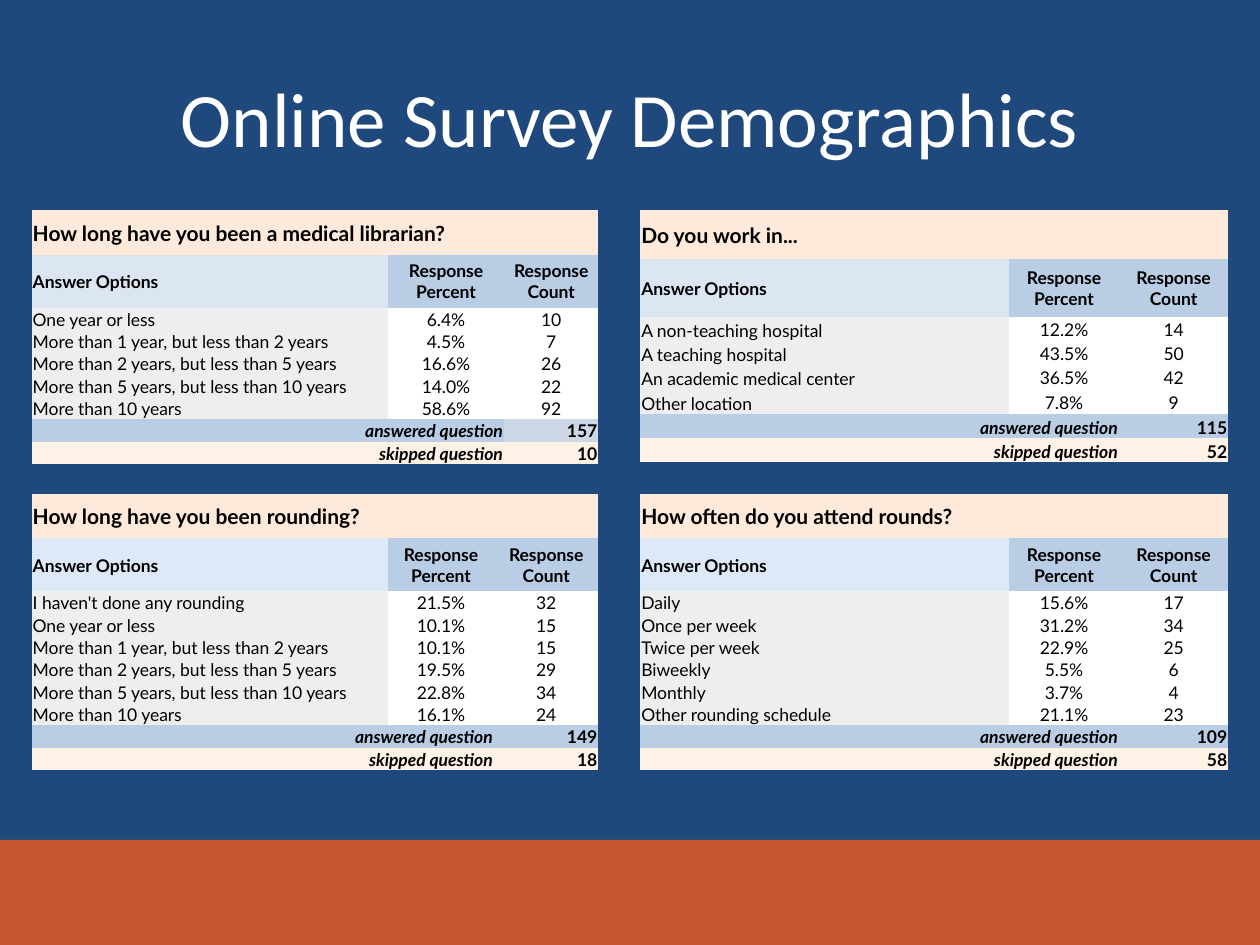
"""Build the survey demographics slide: a title, four result tables and a base band."""
from lxml.etree import SubElement
from pptx import Presentation
from pptx.dml.color import RGBColor
from pptx.enum.shapes import MSO_SHAPE
from pptx.enum.text import MSO_ANCHOR, PP_ALIGN
from pptx.oxml.ns import qn
from pptx.util import Inches, Pt

TITLE = "Online Survey Demographics"
HEADS = ["Answer Options", "Response Percent", "Response Count"]
YEARS = ["One year or less", "More than 1 year, but less than 2 years",
         "More than 2 years, but less than 5 years",
         "More than 5 years, but less than 10 years", "More than 10 years"]

TABLES = [
    dict(ask="How long have you been a medical librarian?", grid=(0, 0),
         cols=(2.83, 0.92, 0.75), head="DCE6F2", total="CDD8E6",
         names=YEARS, shares=[6.4, 4.5, 16.6, 14.0, 58.6],
         counts=[10, 7, 26, 22, 92], done=157, skipped=10),
    dict(ask="How long have you been rounding?", grid=(0, 1),
         cols=(2.83, 0.84, 0.83), head="DEE9F7", total="B9CDE5",
         names=["I haven't done any rounding"] + YEARS,
         shares=[21.5, 10.1, 10.1, 19.5, 22.8, 16.1],
         counts=[32, 15, 15, 29, 34, 24], done=149, skipped=18),
    dict(ask="Do you work in...", grid=(1, 0),
         cols=(2.93, 0.87, 0.87), head="DCE6F2", total="B9CDE5",
         names=["A non-teaching hospital", "A teaching hospital",
                "An academic medical center", "Other location"],
         shares=[12.2, 43.5, 36.5, 7.8],
         counts=[14, 50, 42, 9], done=115, skipped=52),
    dict(ask="How often do you attend rounds?", grid=(1, 1),
         cols=(2.93, 0.87, 0.87), head="DEE9F7", total="B9CDE5",
         names=["Daily", "Once per week", "Twice per week", "Biweekly",
                "Monthly", "Other rounding schedule"],
         shares=[15.6, 31.2, 22.9, 5.5, 3.7, 21.1],
         counts=[17, 34, 25, 6, 4, 23], done=109, skipped=58),
]

THEME = dict(back="1F497D", band="E35622", title="FFFFFF", ink="000000",
             ask="FDEADA", blue="B9CDE5", name="EEEEEE", value="FFFFFF",
             skip="FEF1E6", face="Calibri", body="Lato", big=44, mid=12, small=10)
PLAIN = "{2D5ABB26-0587-4C30-8999-92F81FD0307C}"
WIDE, HIGH = 10, 7.5
LEFTS, TOPS, DEPTHS = (0.25, 5.08), (1.67, 3.92), (2, 2.18)
ASK_ROW, HEAD_ROW = 2, 2.4
LEFT, MID, RIGHT = PP_ALIGN.LEFT, PP_ALIGN.CENTER, PP_ALIGN.RIGHT


def color(key):
    return RGBColor.from_string(THEME.get(key, key))


def style(para, face, size, ink, align):
    para.alignment = align
    para.font.name, para.font.size = THEME[face], Pt(THEME[size])
    para.font.color.rgb = color(ink)


def write(cell, text, fill, align=LEFT, size="small", low=False, bold=False, slant=False):
    cell.margin_left = cell.margin_right = cell.margin_top = Inches(0.01)
    cell.margin_bottom = 0
    cell.vertical_anchor = MSO_ANCHOR.BOTTOM if low else MSO_ANCHOR.MIDDLE
    cell.fill.solid()
    cell.fill.fore_color.rgb = color(fill)
    cell.text = str(text)
    para = cell.text_frame.paragraphs[0]
    style(para, "body", size, "ink", align)
    para.font.bold, para.font.italic = bold, slant


def add_table(slide, data):
    col, row = data["grid"]
    sizes = [ASK_ROW, HEAD_ROW] + [1] * (len(data["names"]) + 2)
    unit = DEPTHS[row] / sum(sizes)
    frame = slide.shapes.add_table(
        len(sizes), len(HEADS), Inches(LEFTS[col]), Inches(TOPS[row]),
        Inches(sum(data["cols"])), Inches(DEPTHS[row]))
    next(frame.element.iter(qn("a:tableStyleId"))).text = PLAIN
    table = frame.table
    table.first_row = table.horz_banding = False
    for part, width in zip(table.columns, data["cols"]):
        part.width = Inches(width)
    for part, size in zip(table.rows, sizes):
        part.height = Inches(size * unit)

    table.cell(0, 0).merge(table.cell(0, 2))
    write(table.cell(0, 0), data["ask"], "ask", size="mid", bold=True)
    for i, text in enumerate(HEADS):
        write(table.cell(1, i), text, "blue" if i else data["head"],
              MID if i else LEFT, bold=True)
    lines = zip(data["names"], data["shares"], data["counts"])
    for i, (name, share, count) in enumerate(lines, 2):
        write(table.cell(i, 0), name, "name", low=True)
        write(table.cell(i, 1), f"{share:.1f}%", "value", MID)
        write(table.cell(i, 2), count, "value", MID)
    sums = [("answered question", data["done"], "blue", data["total"]),
            ("skipped question", data["skipped"], "skip", "skip")]
    for i, (label, count, fill, last) in enumerate(sums, len(sizes) - 2):
        table.cell(i, 0).merge(table.cell(i, 1))
        write(table.cell(i, 0), label, fill, RIGHT, low=True, bold=True, slant=True)
        write(table.cell(i, 2), count, last, RIGHT, low=True, bold=True)


def add_band(slide):
    top = HIGH * 8 / 9
    band = slide.shapes.add_shape(MSO_SHAPE.RECTANGLE, 0, Inches(top),
                                  Inches(WIDE), Inches(HIGH - top))
    band.shadow.inherit = False
    band.line.fill.background()
    band.fill.solid()
    band.fill.fore_color.rgb = color("band")
    tint = next(band.element.spPr.iter(qn("a:srgbClr")))
    SubElement(tint, qn("a:alpha"), val="85000")


def add_title(slide):
    frame = slide.shapes.add_textbox(Inches(0.5), Inches(0.3),
                                     Inches(9), Inches(1.25)).text_frame
    frame.word_wrap = True
    frame.vertical_anchor = MSO_ANCHOR.MIDDLE
    frame.text = TITLE
    style(frame.paragraphs[0], "face", "big", "title", MID)


def main():
    deck = Presentation()
    deck.slide_width, deck.slide_height = Inches(WIDE), Inches(HIGH)
    slide = deck.slides.add_slide(deck.slide_layouts[6])
    slide.background.fill.solid()
    slide.background.fill.fore_color.rgb = color("back")
    add_band(slide)
    add_title(slide)
    for data in TABLES:
        add_table(slide, data)
    deck.save("out.pptx")


if __name__ == "__main__":
    main()
